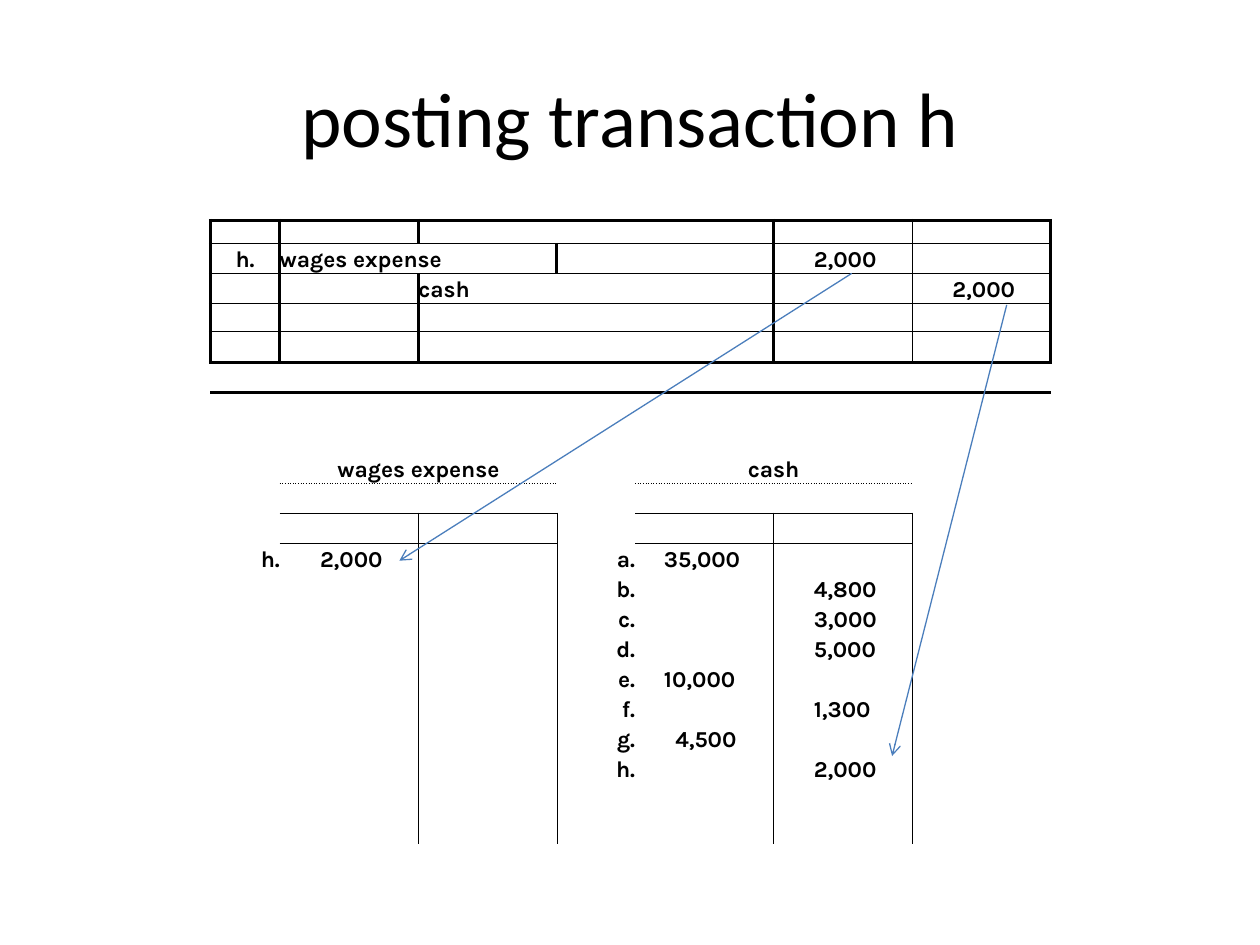
from dataclasses import dataclass

from lxml import etree
from pptx import Presentation
from pptx.dml.color import RGBColor
from pptx.enum.shapes import MSO_CONNECTOR
from pptx.enum.text import MSO_ANCHOR, PP_ALIGN
from pptx.oxml.ns import qn
from pptx.util import Inches, Pt

STRAIGHT = MSO_CONNECTOR.STRAIGHT
MIDDLE, BOTTOM = MSO_ANCHOR.MIDDLE, MSO_ANCHOR.BOTTOM
LEFT, CENTER, RIGHT = PP_ALIGN.LEFT, PP_ALIGN.CENTER, PP_ALIGN.RIGHT
PLAIN = "{2D5ABB26-0587-4C30-8999-92F81FD0307C}"


@dataclass
class Theme:
    ink: str = "000000"
    blue: str = "4B7EBC"
    head: str = "Calibri"
    body: str = "Karla"
    big: float = 44
    small: float = 13
    empty: float = 8
    thick: float = 2
    thin: float = 0.5
    arrow: float = 0.75


class Page:
    def __init__(self, slide, theme):
        self.slide = slide
        self.theme = theme

    def style(self, para, face, size, align, bold=False):
        para.alignment = align
        font = para.font
        font.name, font.size, font.bold = face, Pt(size), bold
        font.color.rgb = RGBColor.from_string(self.theme.ink)

    def title(self, text, left, top, width, height):
        box = self.slide.shapes.add_textbox(
            Inches(left), Inches(top), Inches(width), Inches(height))
        frame = box.text_frame
        frame.word_wrap = True
        frame.vertical_anchor = MIDDLE
        frame.text = text
        self.style(frame.paragraphs[0], self.theme.head, self.theme.big, CENTER)

    def table(self, left, top, cols, rows):
        frame = self.slide.shapes.add_table(
            len(rows), len(cols), Inches(left), Inches(top),
            Inches(sum(cols)), Inches(sum(rows)))
        table = frame.table
        table.first_row = table.horz_banding = False
        table._tbl.tblPr.find(qn("a:tableStyleId")).text = PLAIN
        for col, width in zip(table.columns, cols):
            col.width = Inches(width)
        for row, height in zip(table.rows, rows):
            row.height = Inches(height)
        for cell in table.iter_cells():
            cell.margin_left = cell.margin_right = 0
            cell.margin_top = cell.margin_bottom = 0
            cell.vertical_anchor = BOTTOM
            cell.fill.background()
            end = cell.text_frame.paragraphs[0]._p.get_or_add_endParaRPr()
            end.set("sz", str(int(self.theme.empty * 100)))
        return table

    def entry(self, cell, text, align=LEFT, indent=0):
        cell.text = text
        cell.margin_left = Inches(indent)
        self.style(cell.text_frame.paragraphs[0], self.theme.body,
                   self.theme.small, align, True)

    def borders(self, table, edges):
        for (row, col), sides in edges.items():
            props = table.cell(row, col)._tc.get_or_add_tcPr()
            for spot, side in enumerate(s for s in "LRTB" if s in sides):
                width, dash = sides[side]
                line = etree.Element(qn("a:ln" + side), w=str(Pt(width)))
                fill = etree.SubElement(line, qn("a:solidFill"))
                etree.SubElement(fill, qn("a:srgbClr"), val=self.theme.ink)
                etree.SubElement(line, qn("a:prstDash"), val=dash)
                props.insert(spot, line)

    def arrow(self, start, end):
        link = self.slide.shapes.add_connector(
            STRAIGHT, *(Inches(v) for v in start + end))
        link.line.color.rgb = RGBColor.from_string(self.theme.blue)
        link.line.width = Pt(self.theme.arrow)
        etree.SubElement(link.line._get_or_add_ln(), qn("a:tailEnd"), type="arrow")
        etree.SubElement(link._element.spPr, qn("a:effectLst"))


def across(edges, line, cols, width, dash="solid"):
    for col in cols:
        edges.setdefault((line - 1, col), {})["B"] = (width, dash)
        edges.setdefault((line, col), {})["T"] = (width, dash)


def down(edges, line, rows, width):
    for row in rows:
        edges.setdefault((row, line - 1), {})["R"] = (width, "solid")
        edges.setdefault((row, line), {})["L"] = (width, "solid")


def main():
    deck = Presentation()
    deck.slide_width, deck.slide_height = Inches(10), Inches(7.5)
    theme = Theme()
    page = Page(deck.slides.add_slide(deck.slide_layouts[6]), theme)
    page.title("posting transaction h", 0.5, 0.3, 9, 1.25)

    cols = [0.55, 1.1, 1.1, 0.62, 1.1, 1.1, 1.1]
    top_rows = [0.18, 0.24, 0.24, 0.22, 0.25]
    rows = top_rows + [(4.95 - sum(top_rows)) / 16] * 16
    table = page.table(1.67, 1.75, cols, rows)
    cell = table.cell

    for row, col in [(1, 1), (8, 1), (8, 4)]:
        cell(row, col).merge(cell(row, col + 1))
    page.entry(cell(1, 0), "h.", CENTER)
    page.entry(cell(1, 1), "wages expense")
    page.entry(cell(2, 2), "cash")
    page.entry(cell(8, 1), "wages expense", CENTER)
    page.entry(cell(8, 4), "cash", CENTER)

    ledger = [("a.", 4, "35,000"), ("b.", 5, "4,800"), ("c.", 5, "3,000"),
              ("d.", 5, "5,000"), ("e.", 4, "10,000"), ("f.", 5, "1,300"),
              ("g.", 4, "4,500"), ("h.", 5, "2,000")]
    marks = [(11, 0, "h.")]
    sums = [(1, 5, "2,000"), (2, 6, "2,000"), (11, 1, "2,000")]
    for row, (mark, col, value) in enumerate(ledger, 11):
        marks.append((row, 3, mark))
        sums.append((row, col, value))
    for row, col, mark in marks:
        page.entry(cell(row, col), mark, RIGHT)
    for row, col, value in sums:
        page.entry(cell(row, col), value, indent=0.32 if len(value) == 5 else 0.23)

    edges = {}
    count = len(top_rows)
    for line in range(count + 1):
        width = theme.thick if line in (0, count) else theme.thin
        across(edges, line, range(7), width)
    for line in (0, 1, 5, 6, 7):
        down(edges, line, range(count), theme.thin if line == 6 else theme.thick)
    for col in (1, 4):
        pair = (col, col + 1)
        across(edges, 9, pair, theme.thin, "sysDot")
        across(edges, 10, pair, theme.thin)
        down(edges, col + 1, range(10, len(rows)), theme.thin)
    inside = {(r, c): sides for (r, c), sides in edges.items()
              if 0 <= r < len(rows) and 0 <= c < len(cols)}
    page.borders(table, inside)

    page.arrow((6.76, 2.17), (3.17, 4.45))
    page.arrow((7.99, 2.42), (7.08, 6))
    deck.save("out.pptx")


if __name__ == "__main__":
    main()
